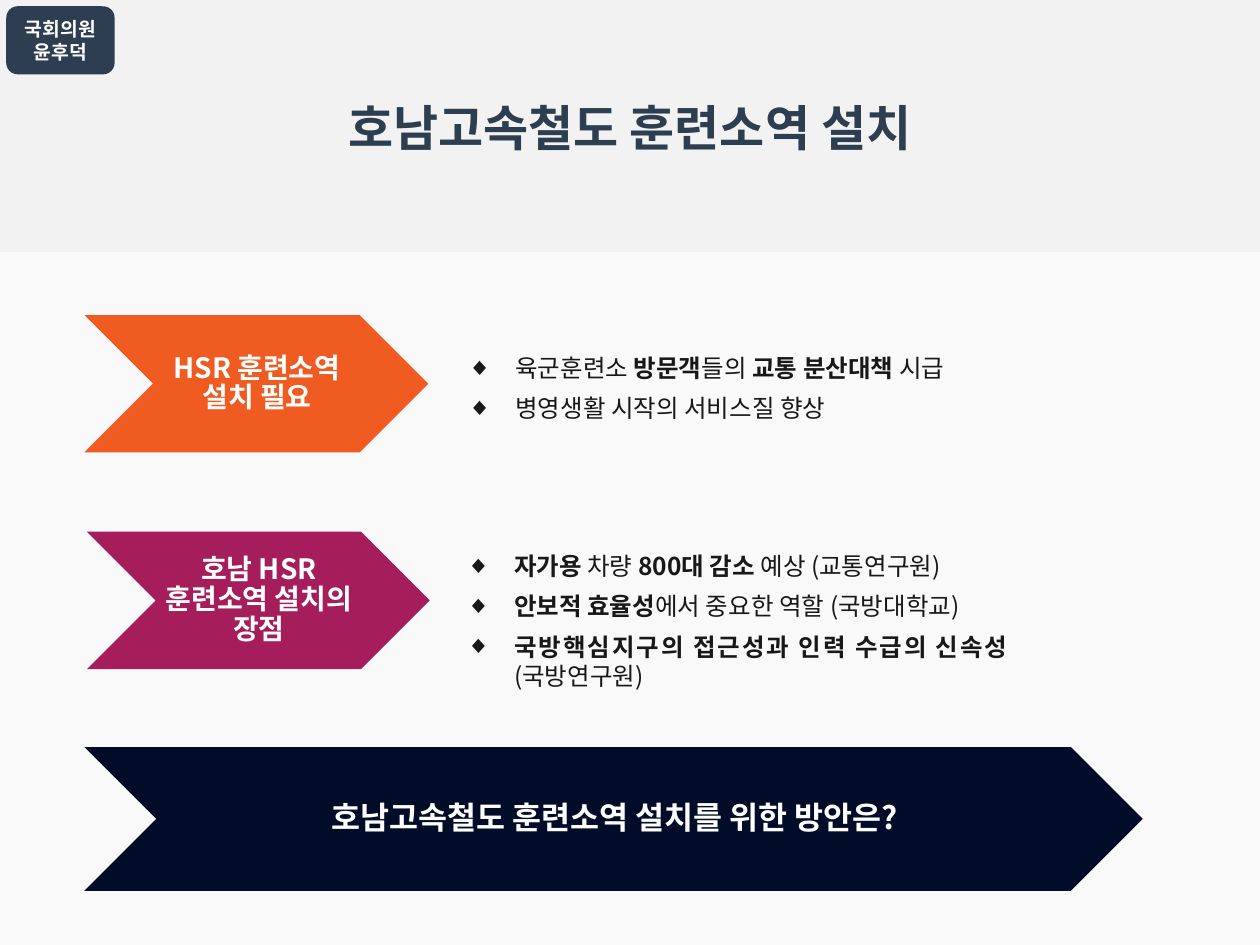
"""Build the slide about setting up a training-centre station on the Honam high-speed line."""
from lxml import etree
from pptx import Presentation
from pptx import util as u
from pptx.dml.color import RGBColor
from pptx.enum import shapes, text
from pptx.oxml.ns import qn

COLOURS = {
    "page": "F9F9F9", "band": "F2F2F2", "slate": "2C3E50", "white": "FFFFFF",
    "ink": "181818", "orange": "F05B21", "plum": "A51E5B", "navy": "000C28",
}
FONT = "Noto Sans CJK KR"
CENTER, JUSTIFY = text.PP_ALIGN.CENTER, text.PP_ALIGN.JUSTIFY

presentation = Presentation()
presentation.slide_width, presentation.slide_height = u.Inches(10), u.Inches(7.5)
column, row = presentation.slide_width / 100, presentation.slide_height / 75
slide = presentation.slides.add_slide(presentation.slide_layouts[3])
slide.background.fill.solid()
slide.background.fill.fore_color.rgb = RGBColor.from_string(COLOURS["page"])


def add_block(parent, preset, left, top, width, height, colour):
    shape = parent.add_shape(preset, *map(int, (left * column, top * row, width * column, height * row)))
    shape.shadow.inherit = False
    shape.fill.solid()
    shape.fill.fore_color.rgb = RGBColor.from_string(COLOURS[colour])
    shape.line.fill.background()
    return shape


def write(shape, paragraphs, size, colour, align=CENTER, anchor=text.MSO_ANCHOR.MIDDLE,
          spacing=None, after=0, bullet=None, margins=(0, 0, 0, 0)):
    frame = shape.text_frame
    frame.word_wrap, frame.auto_size = True, text.MSO_AUTO_SIZE.NONE
    frame.vertical_anchor = anchor
    frame.margin_left, frame.margin_top, frame.margin_right, frame.margin_bottom = map(u.Inches, margins)
    for index, runs in enumerate(paragraphs):
        paragraph = frame.add_paragraph() if index else frame.paragraphs[0]
        paragraph.alignment = align
        paragraph.space_before, paragraph.space_after = u.Pt(0), u.Pt(after)
        if spacing:
            paragraph.line_spacing = u.Pt(spacing)
        if bullet:
            paragraph.level = 1
            properties = paragraph._p.get_or_add_pPr()
            properties.set("marL", str(u.Inches(0.88)))
            properties.set("indent", str(u.Inches(-0.38)))
            etree.SubElement(properties, qn("a:buChar")).set("char", bullet)
        for words, bold in runs:
            run = paragraph.add_run()
            run.text = words
            run.font.name, run.font.size, run.font.bold = FONT, u.Pt(size), bold
            run.font.color.rgb = RGBColor.from_string(COLOURS[colour])
            etree.SubElement(run.font._element, qn("a:ea")).set("typeface", FONT)


band = add_block(slide.shapes, shapes.MSO_SHAPE.RECTANGLE, 0, 0, 100, 20, "band")
slide.shapes._spTree.remove(band._element)
slide.shapes._spTree.insert(2, band._element)

badge = add_block(slide.shapes, shapes.MSO_SHAPE.ROUNDED_RECTANGLE, 0.5, 0.5, 8.6, 5.4, "slate")
write(badge, [[("국회의원", True)], [("윤후덕", True)]], size=11, colour="white", spacing=13)

visit_reasons = [
    [("육군훈련소 ", False), ("방문객", True), ("들의 ", False), ("교통 분산대책 ", True), ("시급", False)],
    [("병영생활 시작의 서비스질 향상", False)],
]
benefits = [
    [("자가용", True), (" 차량 ", False), ("800대 감소", True), (" 예상 (교통연구원)", False)],
    [("안보적 효율성", True), ("에서 중요한 역할 (국방대학교)", False)],
    [("국방핵심지구의 접근성과 인력 수급의 신속성 ", True), ("(국방연구원)", False)],
]
title, first_list, second_list = slide.placeholders
for placeholder, left, top, width, height in (
    (title, 0, 7.2, 100, 5.7),
    (first_list, 31.1, 28, 60.3, 6.6),
    (second_list, 31, 43.7, 50, 11.6),
):
    placeholder.left, placeholder.width = int(left * column), int(width * column)
    placeholder.top, placeholder.height = int(top * row), int(height * row)

write(title, [[("호남고속철도 훈련소역 설치", True)]], size=28, colour="slate")
for placeholder, items in ((first_list, visit_reasons), (second_list, benefits)):
    write(placeholder, items, size=14, colour="ink", align=JUSTIFY, anchor=text.MSO_ANCHOR.TOP,
          spacing=17, after=6, bullet="◆", margins=(0.1, 0, 0.1, 0))

for words, colour, size, left, top, width, height, text_left, text_width in (
    ("HSR 훈련소역 설치 필요", "orange", 16, 6.7, 25, 27.3, 10.9, 12.1, 16.4),
    ("호남 HSR 훈련소역 설치의 장점", "plum", 16, 6.9, 42.2, 27.2, 10.9, 12.3, 16.3),
    ("호남고속철도 훈련소역 설치를 위한 방안은?", "navy", 18, 6.7, 59.3, 84, 11.4, 23.5, 50.4),
):
    group = slide.shapes.add_group_shape()
    add_block(group.shapes, shapes.MSO_SHAPE.CHEVRON, left, top, width, height, colour)
    label = group.shapes.add_textbox(
        *map(int, (text_left * column, top * row, text_width * column, height * row)))
    write(label, [[(words, True)]], size=size, colour="white", spacing=size + 1,
          margins=(0.02, 0.01, 0, 0.01))

presentation.save("out.pptx")
